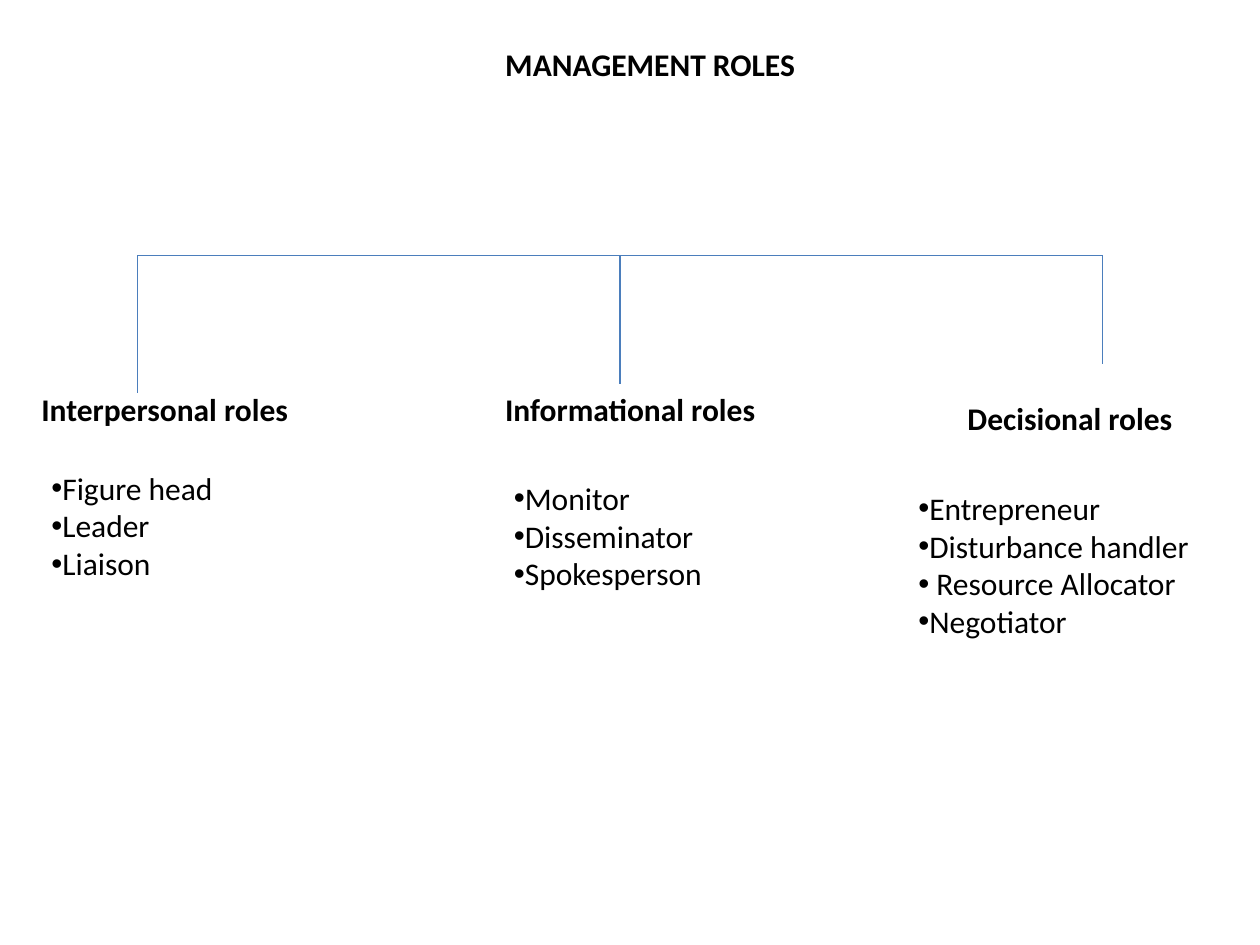
from lxml import etree
from pptx import Presentation
from pptx.dml.color import RGBColor
from pptx.enum.shapes import MSO_CONNECTOR as Link
from pptx.enum.text import MSO_ANCHOR as Anchor, MSO_AUTO_SIZE as Fit, PP_ALIGN as Align
from pptx.oxml.ns import qn
from pptx.util import Inches, Pt

BLACK = RGBColor(0x00, 0x00, 0x00)
BLUE = RGBColor(0x4B, 0x7E, 0xBC)
FONT = "Calibri"

# Heading, its box, roles, their box
GROUPS = [
    ("Interpersonal roles", (0.23, 3.05, 2.66, 0.4),
     ["Figure head", "Leader", "Liaison"], (0.31, 3.67, 1.56, 1.01)),
    ("Informational roles", (3.91, 3.05, 2.81, 0.4),
     ["Monitor", "Disseminator", "Spokesperson"], (3.98, 3.75, 1.88, 1.01)),
    ("Decisional roles", (7.58, 3.12, 2.19, 0.4),
     ["Entrepreneur", "Disturbance handler", " Resource Allocator", "Negotiator"],
     (7.19, 3.83, 2.42, 1.31)),
]
DROPS = [1.09, 1.02, 0.86]


def fill_text(shape, lines, bold=False):
    frame = shape.text_frame
    frame.text = "\n".join(lines)
    frame.word_wrap = True
    frame.auto_size = Fit.NONE
    frame.vertical_anchor = Anchor.TOP
    for para in frame.paragraphs:
        para.alignment = Align.LEFT
        for run in para.runs:
            font = run.font
            font.name, font.size, font.bold = FONT, Pt(18), bold
            font.color.rgb = BLACK


def add_text(slide, box, lines, bold=False):
    shape = slide.shapes.add_textbox(*map(Inches, box))
    fill_text(shape, lines, bold)
    return shape


def add_title(slide, box, text):
    title = slide.shapes.title
    title.left, title.top, title.width, title.height = map(Inches, box)
    fill_text(title, [text], bold=True)


def add_line(slide, *ends):
    line = slide.shapes.add_connector(Link.STRAIGHT, *map(Inches, ends))
    line.line.color.rgb = BLUE
    line.line.width = Pt(0.75)
    etree.SubElement(line.element.spPr, qn("a:effectLst"))


def add_tree(slide, left, top, width, drops):
    """Draw a bar with evenly spaced lines hanging from it."""
    add_line(slide, left, top, left + width, top)
    gap = width / (len(drops) - 1)
    for i, drop in enumerate(drops):
        x = left + i * gap
        add_line(slide, x, top, x, top + drop)


def add_roles(slide, box, roles):
    shape = add_text(slide, box, roles)
    for para in shape.text_frame.paragraphs:
        props = para._p.get_or_add_pPr()
        etree.SubElement(props, qn("a:buFont"), typeface="Arial")
        etree.SubElement(props, qn("a:buChar"), char="•")


def main():
    deck = Presentation()
    deck.slide_width, deck.slide_height = Inches(10), Inches(7.5)
    slide = deck.slides.add_slide(deck.slide_layouts[5])
    add_title(slide, (3.91, 0.31, 2.97, 0.4), "MANAGEMENT ROLES")
    add_tree(slide, 1.09, 2.03, 7.66, DROPS)
    for head, head_box, roles, roles_box in GROUPS:
        add_text(slide, head_box, [head], bold=True)
        add_roles(slide, roles_box, roles)
    deck.save("out.pptx")


if __name__ == "__main__":
    main()
